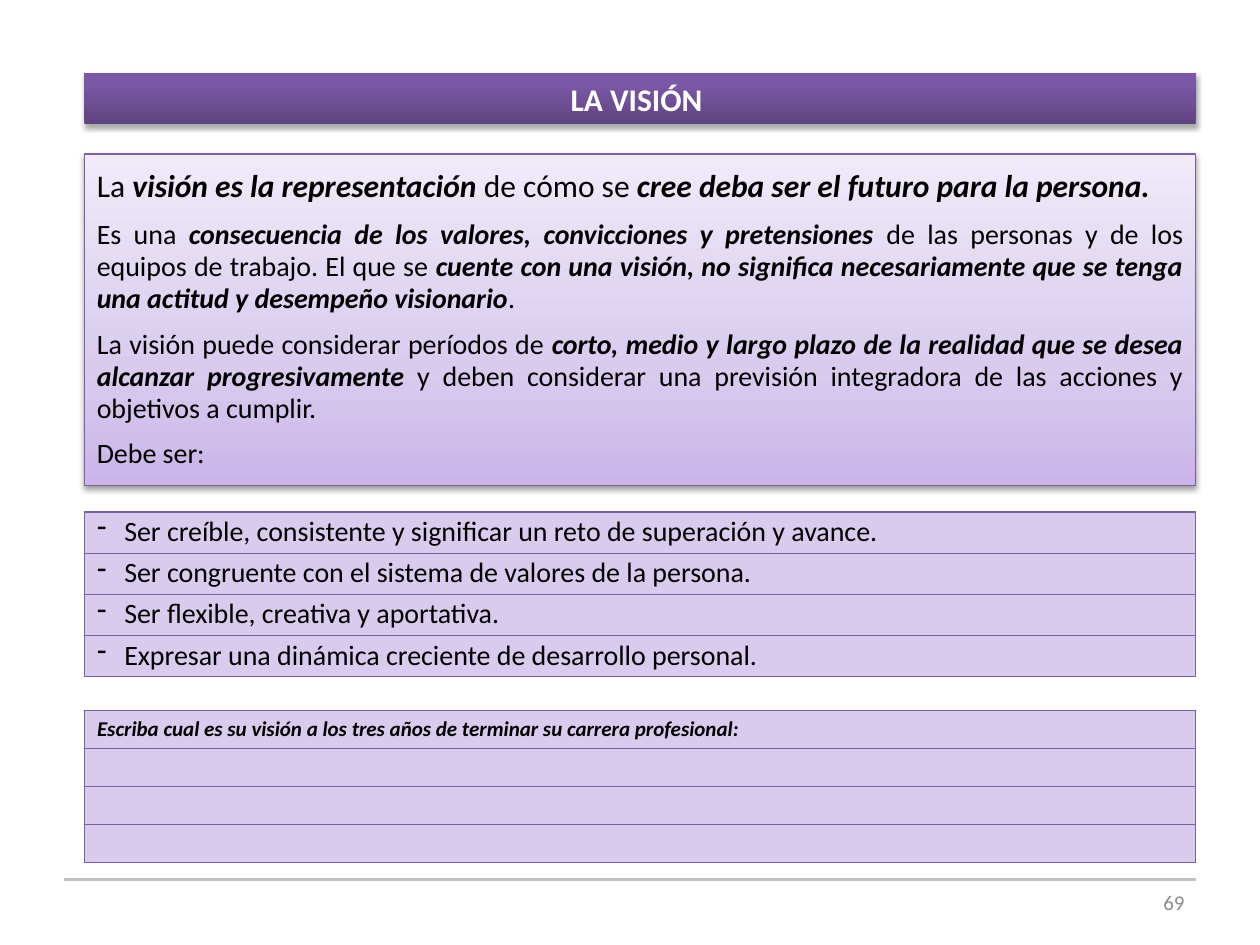
from lxml import etree
from pptx import Presentation
from pptx.dml.color import RGBColor as RGB
from pptx.enum.shapes import MSO_CONNECTOR as LINE, MSO_SHAPE as SHAPE
from pptx.enum.text import MSO_ANCHOR as ANCHOR, PP_ALIGN as ALIGN
from pptx.oxml import parse_xml
from pptx.oxml.ns import nsdecls, qn
from pptx.util import Pt

INK = {"text": "000000", "white": "FFFFFF", "page": "8C8C8C",
       "rule": "BFBFBF", "edge": "7D60A0", "cell": "D9CBEE"}
DARK = [(0, "5F4480"), (80, "7B58A6"), (100, "7C57A8")]
PALE = [(0, "C9B5E8"), (35, "D8CBEE"), (100, "F0EAF9")]
FONT = "Calibri"
LEFT, WIDE = 48.24, 635.04

# Each paragraph: size, then runs of (text, stressed)
BODY = [
    (18, [("La ", False), ("visión es la representación", True),
          (" de cómo se ", False),
          ("cree deba ser el futuro para la persona. ", True)]),
    (16, [("Es una ", False),
          ("consecuencia de los valores, convicciones y pretensiones", True),
          (" de las personas y de los equipos de trabajo. El que se ", False),
          ("cuente con una visión, no significa necesariamente que se tenga "
           "una actitud y desempeño visionario", True), (". ", False)]),
    (16, [("La visión puede considerar períodos de ", False),
          ("corto, medio y largo plazo de la realidad que se desea alcanzar "
           "progresivamente", True),
          (" y deben considerar una previsión integradora de las acciones y "
           "objetivos a cumplir.", False)]),
    (16, [("Debe ser:", False)]),
]
GOALS = ["Ser creíble, consistente y significar un reto de superación y avance.",
         "Ser congruente con el sistema de valores de la persona.",
         "Ser flexible, creativa y aportativa.",
         "Expresar una dinámica creciente de desarrollo personal."]
TASK = ["Escriba cual es su visión a los tres años de terminar su carrera "
        "profesional:", "", "", ""]


def write(para, text, size, color="text", bold=False, italic=False):
    run = para.add_run()
    run.text = text
    font = run.font
    font.name, font.size, font.bold, font.italic = FONT, Pt(size), bold, italic
    font.color.rgb = RGB.from_string(INK[color])


def panel(top, high, stops, alpha, dist):
    """Add a rectangle with a vertical gradient and a soft shadow."""
    box = slide.shapes.add_shape(SHAPE.RECTANGLE, Pt(LEFT), Pt(top),
                                 Pt(WIDE), Pt(high))
    box.fill.gradient()
    box.fill.gradient_angle = 90
    props = box.element.spPr
    ramp = next(props.iter(qn("a:gsLst")))
    for stop in list(ramp):
        ramp.remove(stop)
    for pos, color in stops:
        stop = etree.SubElement(ramp, qn("a:gs"), pos=str(pos * 1000))
        etree.SubElement(stop, qn("a:srgbClr"), val=color)
    box.line.fill.background()
    box.shadow.inherit = False
    props.find(qn("a:effectLst")).append(parse_xml(
        f'<a:outerShdw {nsdecls("a")} blurRad="{Pt(3.1)}" dist="{Pt(dist)}" '
        f'dir="5400000" rotWithShape="0"><a:srgbClr val="000000">'
        f'<a:alpha val="{alpha * 1000}"/></a:srgbClr></a:outerShdw>'))
    box.text_frame.word_wrap = True
    box.text_frame.vertical_anchor = ANCHOR.MIDDLE
    return box


def grid(top, high, texts, fill):
    """Add a one-column table; fill(para, text) writes each cell."""
    frame = slide.shapes.add_table(len(texts), 1, Pt(LEFT), Pt(top), Pt(WIDE),
                                   Pt(high * len(texts)))
    table = frame.table
    table.first_row = table.horz_banding = False
    for row, text in zip(table.rows, texts):
        row.height = Pt(high)
        cell = row.cells[0]
        cell.fill.solid()
        cell.fill.fore_color.rgb = RGB.from_string(INK["cell"])
        fill(cell.text_frame.paragraphs[0], text)
    for props in frame.element.iter(qn("a:tcPr")):
        for spot, side in enumerate("LRTB"):
            props.insert(spot, parse_xml(
                f'<a:ln{side} {nsdecls("a")} w="{Pt(0.75)}"><a:solidFill>'
                f'<a:srgbClr val="{INK["edge"]}"/></a:solidFill></a:ln{side}>'))


def goal(para, text):
    props = para._p.get_or_add_pPr()
    props.set("marL", str(Pt(15.6)))
    props.set("indent", str(-Pt(15.6)))
    etree.SubElement(props, qn("a:buChar"), char="-")
    para.alignment, para.line_spacing = ALIGN.JUSTIFY, 0.85
    write(para, text, 16)


def task(para, text):
    if text:
        write(para, text, 12, bold=True, italic=True)
    else:
        para._p.get_or_add_endParaRPr().set("sz", "1200")


deck = Presentation()
deck.slide_width, deck.slide_height = Pt(720), Pt(540)
slide = deck.slides.add_slide(deck.slide_layouts[6])

rule = slide.shapes.add_connector(LINE.STRAIGHT, Pt(36.7), Pt(502.5),
                                  Pt(683.3), Pt(502.5))
rule.line.color.rgb = RGB.from_string(INK["rule"])
rule.line.width = Pt(2)
etree.SubElement(rule.element.spPr, qn("a:effectLst"))

page = slide.shapes.add_textbox(Pt(516.24), Pt(500.9), Pt(167.76), Pt(28.8))
page.text_frame.word_wrap = True
page.text_frame.vertical_anchor = ANCHOR.MIDDLE
para = page.text_frame.paragraphs[0]
para.alignment = ALIGN.RIGHT
write(para, "69", 12, "page")

title = panel(41.8, 29.1, DARK, 35, 1.8)
para = title.text_frame.paragraphs[0]
para.alignment = ALIGN.CENTER
write(para, "LA VISIÓN ", 18, "white", bold=True)

grid(292.6, 23.5, GOALS, goal)

body = panel(88, 189.4, PALE, 38, 1.6)
body.line.color.rgb = RGB.from_string(INK["edge"])
body.line.width = Pt(0.75)
text = body.text_frame
for spot, (size, runs) in enumerate(BODY):
    para = text.add_paragraph() if spot else text.paragraphs[0]
    para.alignment, para.line_spacing = ALIGN.JUSTIFY, 0.95
    if spot:
        para.space_before = Pt(8)
    for words, stress in runs:
        write(para, words, size, bold=stress, italic=stress)

grid(406, 21.7, TASK, task)

deck.save("out.pptx")
